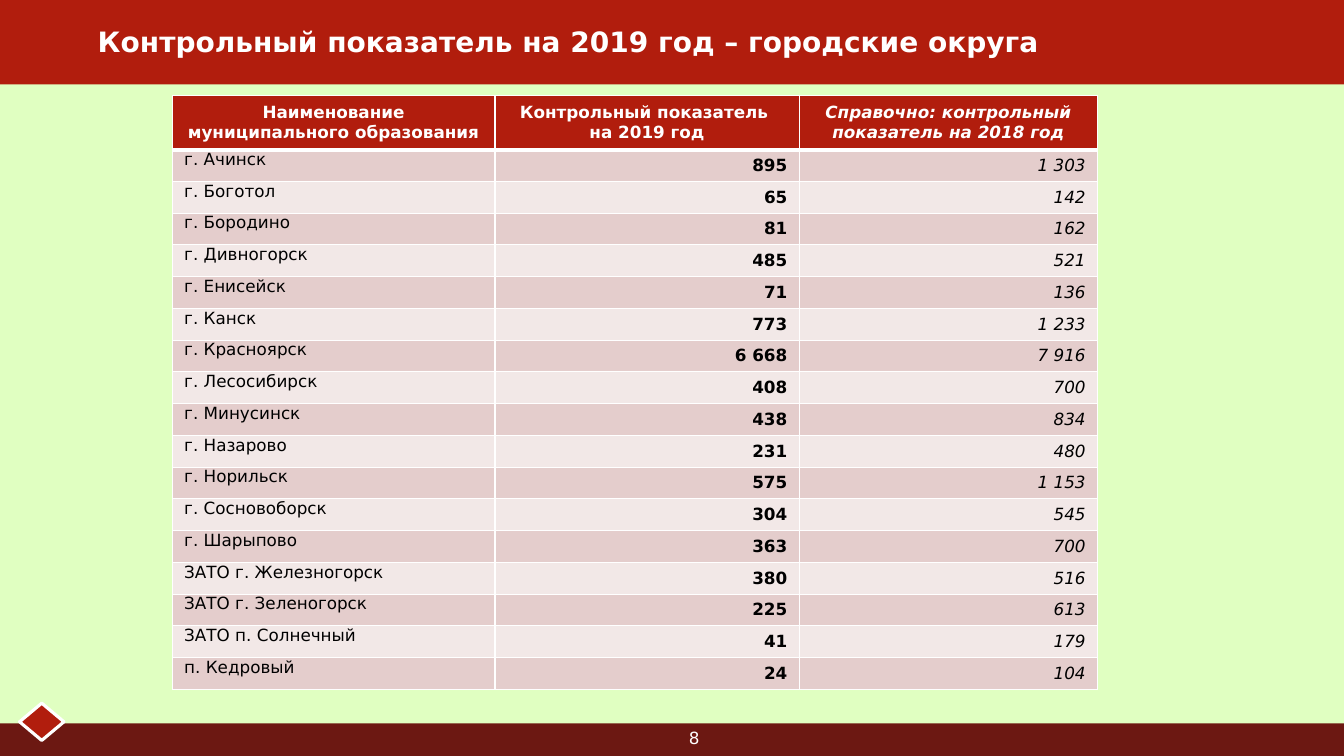
from lxml.etree import SubElement
from pptx import Presentation
from pptx.dml.color import RGBColor
from pptx.enum.shapes import MSO_SHAPE as Shape
from pptx.enum.text import MSO_ANCHOR as Anchor, PP_ALIGN as Align
from pptx.oxml.ns import qn
from pptx.util import Pt

TITLE = "Контрольный показатель на 2019 год – городские округа"
PAGE_NUMBER = "8"
# Each heading is a tuple of lines
HEADINGS = [
    ("Наименование муниципального образования",),
    ("Контрольный показатель ", "на 2019 год"),
    ("Справочно: контрольный показатель на 2018 год",),
]
TOWNS = [
    ("г. Ачинск", "895", "1 303"),
    ("г. Боготол", "65", "142"),
    ("г. Бородино", "81", "162"),
    ("г. Дивногорск", "485", "521"),
    ("г. Енисейск", "71", "136"),
    ("г. Канск", "773", "1 233"),
    ("г. Красноярск", "6 668", "7 916"),
    ("г. Лесосибирск", "408", "700"),
    ("г. Минусинск", "438", "834"),
    ("г. Назарово", "231", "480"),
    ("г. Норильск", "575", "1 153"),
    ("г. Сосновоборск", "304", "545"),
    ("г. Шарыпово", "363", "700"),
    ("ЗАТО г. Железногорск", "380", "516"),
    ("ЗАТО г. Зеленогорск", "225", "613"),
    ("ЗАТО п. Солнечный", "41", "179"),
    ("п. Кедровый", "24", "104"),
]

RED, DARK_RED, WHITE, BLACK = "B11D0D", "6C1812", "FFFFFF", "000000"
BACKGROUND = "E0FFC1"
BANDS = ("E4CDCC", "F2E8E7")
FONT = "DejaVu Sans"

WIDTH, HEIGHT = 960, 540
FOOTER_TOP = 516.7
TABLE_LEFT, TABLE_TOP = 123.1, 68
COLUMNS = (230.4, 217.4, 213.1)
HEADING_HEIGHT, ROW_HEIGHT = 38.9, 22.68
CELL_INSET = 8.5
THIN, THICK = 1, 3


def color(value):
    return RGBColor.from_string(value)


def write(frame, lines, size, ink, align, bold=False, italic=False):
    para = frame.paragraphs[0]
    para.alignment = align
    for number, line in enumerate(lines):
        if number:
            para.add_line_break()
        span = para.add_run()
        span.text = line
        span.font.name, span.font.size = FONT, Pt(size)
        span.font.bold, span.font.italic = bold, italic
        span.font.color.rgb = color(ink)


def add_figure(page, kind, left, top, width, height, fill):
    figure = page.shapes.add_shape(kind, Pt(left), Pt(top), Pt(width), Pt(height))
    figure.shadow.inherit = False
    figure.fill.solid()
    figure.fill.fore_color.rgb = color(fill)
    figure.line.fill.background()
    return figure


def add_borders(cell, top, bottom):
    properties = cell._tc.get_or_add_tcPr()
    for side, weight in (("L", THIN), ("R", THIN), ("T", top), ("B", bottom)):
        line = SubElement(properties, qn("a:ln" + side), w=str(Pt(weight)))
        fill = SubElement(line, qn("a:solidFill"))
        SubElement(fill, qn("a:srgbClr"), val=WHITE)


def fill_cell(cell, row, column, lines):
    heading = row == 0
    add_borders(cell, THICK if row == 1 else THIN, THICK if heading else THIN)
    cell.fill.solid()
    cell.fill.fore_color.rgb = color(RED if heading else BANDS[(row - 1) % 2])
    cell.margin_left = cell.margin_right = Pt(CELL_INSET)
    cell.margin_top = cell.margin_bottom = 0
    is_name = not heading and column == 0
    cell.vertical_anchor = Anchor.TOP if is_name else Anchor.MIDDLE
    align = Align.CENTER if heading else Align.LEFT if is_name else Align.RIGHT
    write(cell.text_frame, lines, 12, WHITE if heading else BLACK, align,
          bold=heading or column == 1, italic=column == 2)


def add_town_table(page):
    rows = [HEADINGS] + [[(text,) for text in town] for town in TOWNS]
    heights = [HEADING_HEIGHT] + [ROW_HEIGHT] * len(TOWNS)
    table = page.shapes.add_table(
        len(rows), len(COLUMNS), Pt(TABLE_LEFT), Pt(TABLE_TOP),
        Pt(sum(COLUMNS)), Pt(sum(heights))).table
    for column, width in zip(table.columns, COLUMNS):
        column.width = Pt(width)
    for row, (texts, height) in enumerate(zip(rows, heights)):
        table.rows[row].height = Pt(height)
        for column, lines in enumerate(texts):
            fill_cell(table.cell(row, column), row, column, lines)


def place_title(page):
    title = page.shapes.title
    title.left, title.top, title.width, title.height = 0, Pt(0.7), Pt(812), Pt(57.6)
    title.text_frame.vertical_anchor = Anchor.MIDDLE
    write(title.text_frame, [TITLE], 20, WHITE, Align.CENTER, bold=True)
    page.shapes.element.append(title.element)  # bring in front of the header bar


def add_page_number(page):
    box = page.shapes.add_textbox(Pt(383.8), Pt(516.2), Pt(224), Pt(18.7))
    box.text_frame.word_wrap = True
    write(box.text_frame, [PAGE_NUMBER], 12, WHITE, Align.CENTER)


def main():
    deck = Presentation()
    deck.slide_width, deck.slide_height = Pt(WIDTH), Pt(HEIGHT)
    page = deck.slides.add_slide(deck.slide_layouts[5])
    page.background.fill.solid()
    page.background.fill.fore_color.rgb = color(BACKGROUND)

    add_figure(page, Shape.RECTANGLE, 0, 0, WIDTH, 60.3, RED)
    add_figure(page, Shape.RECTANGLE, 0, FOOTER_TOP, WIDTH, HEIGHT - FOOTER_TOP, DARK_RED)
    diamond = add_figure(page, Shape.DIAMOND, 14, 502.3, 31.7, 26.6, RED)
    diamond.line.color.rgb = color(WHITE)
    diamond.line.width = Pt(2.25)
    place_title(page)
    add_town_table(page)
    add_page_number(page)
    deck.save("out.pptx")


if __name__ == "__main__":
    main()
